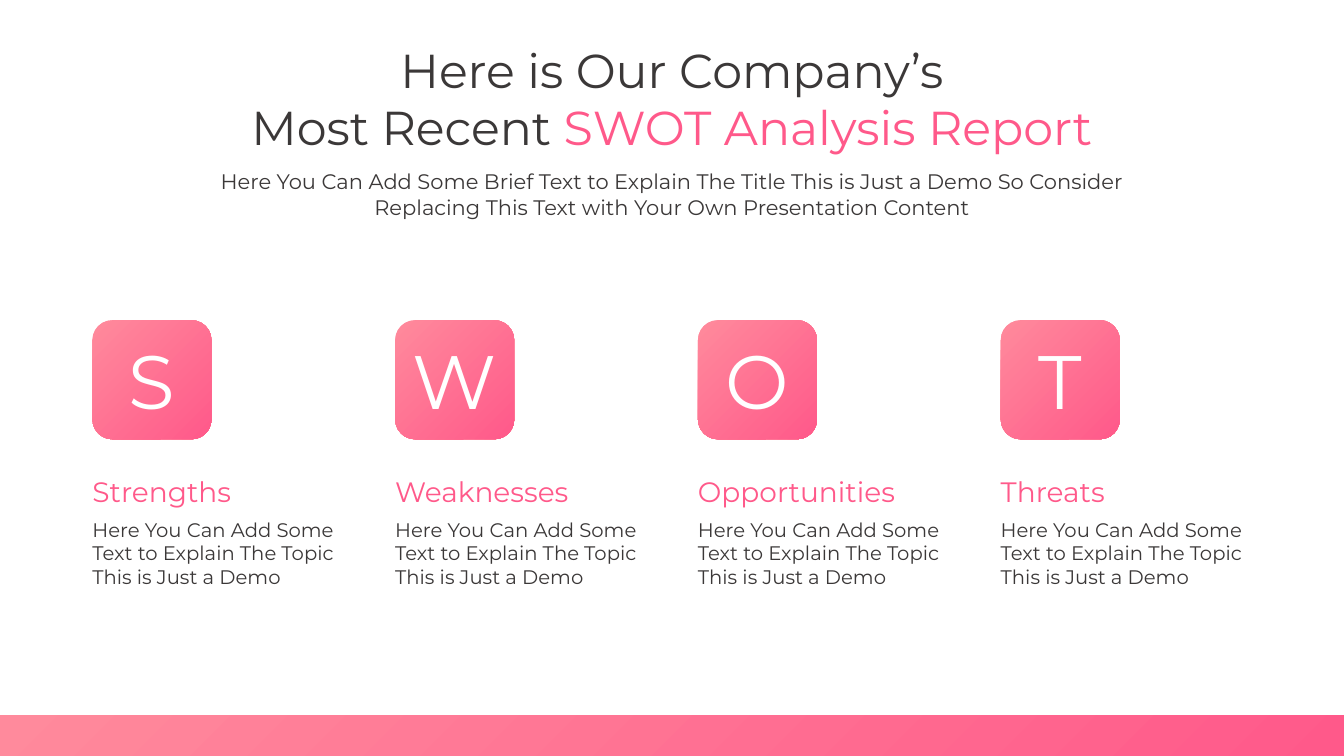
from dataclasses import dataclass

from lxml.etree import SubElement
from pptx import Presentation
from pptx.dml.color import RGBColor
from pptx.enum.shapes import MSO_SHAPE as Preset
from pptx.enum.text import MSO_ANCHOR as Anchor, MSO_AUTO_SIZE as AutoSize, PP_ALIGN as Align
from pptx.oxml.ns import qn
from pptx.util import Cm, Pt


@dataclass(frozen=True)
class Theme:
    """Colours, typeface and type sizes of the slide."""
    font: str = "Montserrat"
    ink: str = "3B3838"
    pink: str = "FF598A"
    blush: str = "FF8A9C"
    white: str = "FFFFFF"
    title: int = 34
    subtitle: int = 15
    letter: int = 54
    heading: int = 20
    body: int = 14


THEME = Theme()
WIDTH, HEIGHT = 33.87, 19.05
TOPICS = ["Strengths", "Weaknesses", "Opportunities", "Threats"]
TOPIC_TEXT = "Here You Can Add Some Text to Explain The Topic This is Just a Demo"
SUBTITLE = ("Here You Can Add Some Brief Text to Explain The Title This is Just a Demo "
            "So Consider Replacing This Text with Your Own Presentation Content")


def write(holder, lines, size, align=Align.LEFT, anchor=Anchor.TOP, wrap=True):
    """Fill a text holder with lines, each a list of (text, colour) runs."""
    frame = holder.text_frame
    frame.auto_size = AutoSize.NONE
    frame.word_wrap = wrap
    frame.vertical_anchor = anchor
    paragraph = frame.paragraphs[0]
    paragraph.alignment = align
    paragraph.line_spacing = 1.0
    for index, line in enumerate(lines):
        if index:
            paragraph.add_line_break()
        for text, colour in line:
            run = paragraph.add_run()
            run.text = text
            run.font.name = THEME.font
            run.font.size = Pt(size)
            run.font.color.rgb = RGBColor.from_string(colour)


def add_text(slide, box, text, size, colour=THEME.ink, **layout):
    """Add a text box holding one run in the given box."""
    holder = slide.shapes.add_textbox(*map(Cm, box))
    write(holder, [[(text, colour)]], size, **layout)


def add_glow(slide, preset, box):
    """Add a shape whose pink gradient spreads from its lower right corner."""
    shape = slide.shapes.add_shape(preset, *map(Cm, box))
    shape.shadow.inherit = False
    shape.line.fill.background()
    shape.fill.gradient()
    for stop, colour, position in zip(shape.fill.gradient_stops, (THEME.pink, THEME.blush), (0, 1)):
        stop.color.rgb = RGBColor.from_string(colour)
        stop.position = position
    gradient = shape._element.spPr.find(qn("a:gradFill"))
    gradient.remove(gradient.find(qn("a:lin")))
    radial = SubElement(gradient, qn("a:path"), path="circle")
    SubElement(radial, qn("a:fillToRect"), l="100000", t="100000")
    return shape


def add_header(slide, left, top, width):
    """Place the two-line title and the subtitle below it."""
    title = slide.shapes.title
    title.left, title.top, title.width, title.height = map(Cm, (left, top, width, 3.18))
    lines = [[("Here is Our Company’s", THEME.ink)],
             [("Most Recent ", THEME.ink), ("SWOT Analysis Report", THEME.pink)]]
    write(title, lines, THEME.title, align=Align.CENTER)
    add_text(slide, (left, top + 3.22, width, 1.55), SUBTITLE, THEME.subtitle, align=Align.CENTER)


def add_topic(slide, left, top, width, topic):
    """Place one topic: letter tile, heading and description."""
    tile = add_glow(slide, Preset.ROUNDED_RECTANGLE, (left + 0.25, top, 3, 3))
    write(tile, [[(topic[0], THEME.white)]], THEME.letter,
          align=Align.CENTER, anchor=Anchor.MIDDLE, wrap=False)
    add_text(slide, (left, top + 3.76, width, 1.12), topic, THEME.heading, THEME.pink)
    add_text(slide, (left, top + 4.85, width, 2.06), TOPIC_TEXT, THEME.body)


def add_topics(slide, left, top, pitch):
    """Set the topics out in equal columns."""
    for column, topic in enumerate(TOPICS):
        add_topic(slide, left + column * pitch, top, 7.39, topic)


def main():
    """Build and save the SWOT slide."""
    deck = Presentation()
    deck.slide_width, deck.slide_height = Cm(WIDTH), Cm(HEIGHT)
    slide = deck.slides.add_slide(deck.slide_layouts[5])
    header_width = 25.58
    add_header(slide, (WIDTH - header_width) / 2, 0.91, header_width)
    add_glow(slide, Preset.RECTANGLE, (0, HEIGHT - 1.02, WIDTH, 1.02))
    add_topics(slide, 2.08, 8.07, 7.63)
    deck.save("out.pptx")


if __name__ == "__main__":
    main()
